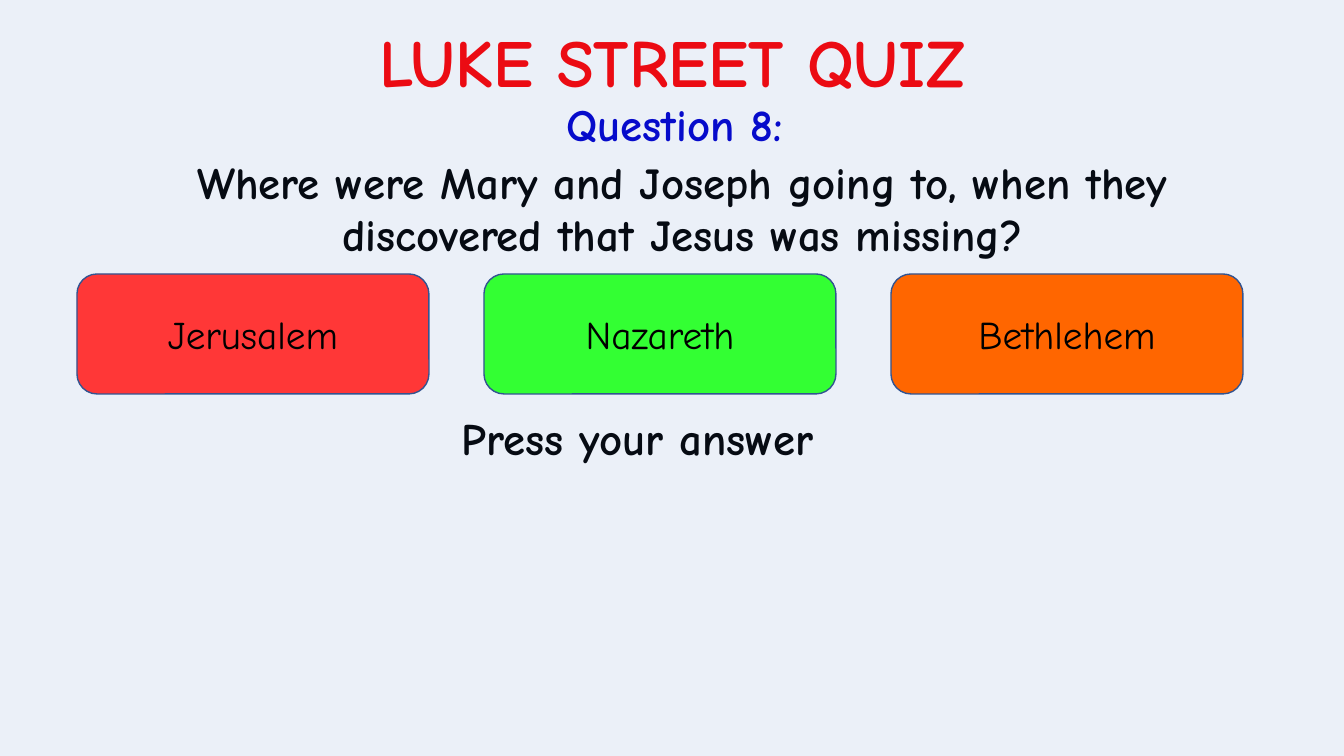
import pptx
import pptx.dml.color
import pptx.enum.shapes
import pptx.enum.text
import pptx.oxml.ns
import pptx.util
from lxml import etree

RGBColor = pptx.dml.color.RGBColor
PP_ALIGN = pptx.enum.text.PP_ALIGN
MSO_ANCHOR = pptx.enum.text.MSO_ANCHOR
MSO_SHAPE = pptx.enum.shapes.MSO_SHAPE
Pt = pptx.util.Pt

BLACK = RGBColor(0x00, 0x00, 0x00)
TITLE_RED = RGBColor(0xFF, 0x00, 0x00)
QUESTION_BLUE = RGBColor(0x00, 0x00, 0xCC)
TINT_BLUE = RGBColor(0x44, 0x72, 0xC4)
OUTLINE_BLUE = RGBColor(0x32, 0x54, 0x91)
ANSWER_RED = RGBColor(0xFF, 0x37, 0x37)
ANSWER_GREEN = RGBColor(0x33, 0xFF, 0x33)
ANSWER_ORANGE = RGBColor(0xFF, 0x66, 0x00)

PAGE_WIDTH, PAGE_HEIGHT = 1344, 756
EMU_PER_PX = 914400 / 100.8


def px(length):
    return pptx.util.Emu(round(length * EMU_PER_PX))


class QuizPage:
    font_name = "Comic Neue"

    def __init__(self, deck):
        self.page = deck.slides.add_slide(deck.slide_layouts[5])

    def set_text(self, shape, text, size, color, bold=True, align=PP_ALIGN.CENTER):
        para = shape.text_frame.paragraphs[0]
        para.text = text
        para.alignment = align
        font = para.font
        font.name, font.size, font.bold = self.font_name, Pt(size), bold
        font.color.rgb = color
        return para

    def title(self, text, left, top, width, height):
        box = self.page.shapes.title
        box.left, box.top, box.width, box.height = map(px, (left, top, width, height))
        frame = box.text_frame
        frame.word_wrap = False
        frame.auto_size = pptx.enum.text.MSO_AUTO_SIZE.NONE
        frame.vertical_anchor = MSO_ANCHOR.TOP
        self.set_text(box, text, 48, TITLE_RED)

    def text(self, text, left, top, width, height, color=BLACK,
             align=PP_ALIGN.CENTER, line_spacing=None, space_before=None):
        box = self.page.shapes.add_textbox(*map(px, (left, top, width, height)))
        box.text_frame.word_wrap = True
        para = self.set_text(box, text, 32, color, align=align)
        para.line_spacing = line_spacing
        para.space_before = space_before

    def shape(self, kind, left, top, width, height, fill):
        shape = self.page.shapes.add_shape(kind, *map(px, (left, top, width, height)))
        shape.shadow.inherit = False
        shape.fill.solid()
        shape.fill.fore_color.rgb = fill
        return shape

    def tint(self, color, percent):
        """Cover the whole page with a transparent colour."""
        cover = self.shape(MSO_SHAPE.RECTANGLE, 0, 0, PAGE_WIDTH, PAGE_HEIGHT, color)
        cover.line.fill.background()
        qn = pptx.oxml.ns.qn
        color_node = cover.element.spPr.find(qn("a:solidFill")).find(qn("a:srgbClr"))
        etree.SubElement(color_node, qn("a:alpha"), val=str(percent * 1000))

    def answer(self, text, left, top, width, height, fill):
        button = self.shape(MSO_SHAPE.ROUNDED_RECTANGLE, left, top, width, height, fill)
        button.line.color.rgb = OUTLINE_BLUE
        button.line.width = Pt(1)
        button.text_frame.vertical_anchor = MSO_ANCHOR.MIDDLE
        self.set_text(button, text, 28, BLACK, bold=False)


def main():
    deck = pptx.Presentation()
    deck.slide_width, deck.slide_height = px(PAGE_WIDTH), px(PAGE_HEIGHT)
    quiz = QuizPage(deck)

    quiz.title("LUKE STREET QUIZ", 315, 15, 714, 92)
    quiz.text("Where were Mary and Joseph going to, when they discovered that Jesus was missing?",
              100, 152, 1166, 120, line_spacing=Pt(37), space_before=Pt(10))
    quiz.text("Press your answer", 452, 412, 678, 73,
              align=PP_ALIGN.LEFT, line_spacing=0.9, space_before=Pt(7.5))
    quiz.text("Question 8:", 452, 92, 445, 65, color=QUESTION_BLUE)
    quiz.tint(TINT_BLUE, 10)

    answers = [("Jerusalem", ANSWER_RED), ("Nazareth", ANSWER_GREEN),
               ("Bethlehem", ANSWER_ORANGE)]
    for column, (place, fill) in enumerate(answers):
        quiz.answer(place, 77 + 407 * column, 274, 352, 120, fill)

    deck.save("out.pptx")


if __name__ == "__main__":
    main()
